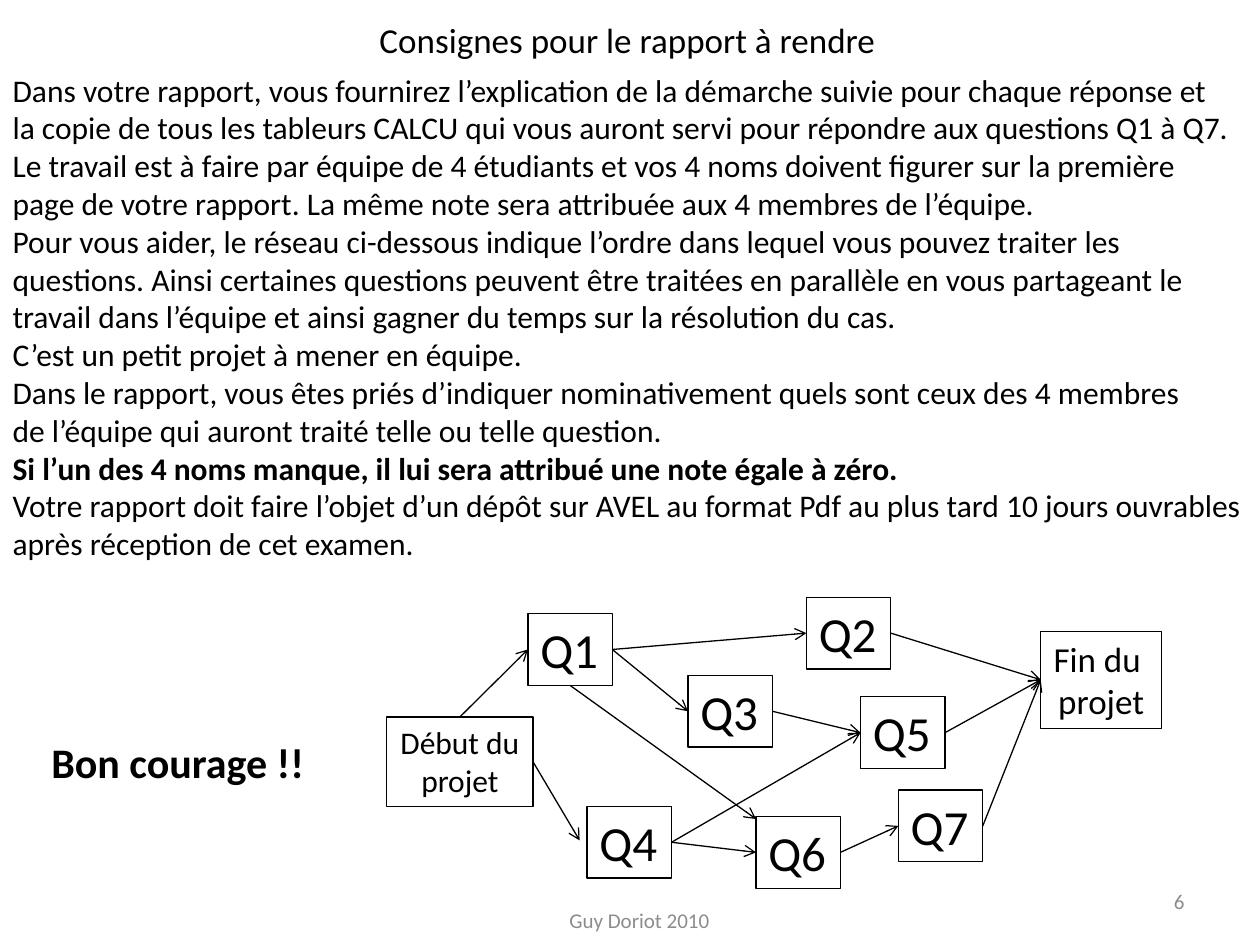
from lxml import etree
from pptx import Presentation
from pptx import util as u
from pptx.dml.color import RGBColor
from pptx.enum import shapes, text
from pptx.oxml import ns

# The slide is a grid of 100 columns by 75 rows
COLUMNS, ROWS = 100, 75
BLACK, GREY = "000000", "8C8C8C"
TOP, LEFT, BOTTOM, RIGHT = range(4)
ALIGN = text.PP_ALIGN

INSTRUCTIONS = [
    "Dans votre rapport, vous fournirez l’explication de la démarche suivie pour chaque réponse et",
    "la copie de tous les tableurs CALCU qui vous auront servi pour répondre aux questions Q1 à Q7.",
    "Le travail est à faire par équipe de 4 étudiants et vos 4 noms doivent figurer sur la première",
    "page de votre rapport. La même note sera attribuée aux 4 membres de l’équipe.",
    "Pour vous aider, le réseau ci-dessous indique l’ordre dans lequel vous pouvez traiter les",
    "questions. Ainsi certaines questions peuvent être traitées en parallèle en vous partageant le",
    "travail dans l’équipe et ainsi gagner du temps sur la résolution du cas.",
    "C’est un petit projet à mener en équipe.",
    "Dans le rapport, vous êtes priés d’indiquer nominativement quels sont ceux des 4 membres",
    "de l’équipe qui auront traité telle ou telle question.",
    "Si l’un des 4 noms manque, il lui sera attribué une note égale à zéro.",
    "Votre rapport doit faire l’objet d’un dépôt sur AVEL au format Pdf au plus tard 10 jours ouvrables",
    "après réception de cet examen.",
]
WARNING = 10  # the line set in bold

# Question boxes: column and row inside the network
QUESTIONS = {
    "Q1": (11.2, 1.3), "Q2": (33.3, 0), "Q3": (23.9, 6.2), "Q4": (15.9, 16.6),
    "Q5": (37.6, 7.9), "Q6": (29.3, 17.4), "Q7": (40.6, 15.3),
}
# Arrows from the right side of one box to the left side of the next
STEPS = [("Q1", "Q2"), ("Q1", "Q3"), ("Q3", "Q5"), ("Q4", "Q5"), ("Q4", "Q6"),
         ("Q6", "Q7"), ("Q7", "Fin"), ("Q5", "Fin"), ("Q2", "Fin")]

presentation = Presentation()
presentation.slide_width, presentation.slide_height = u.Inches(10), u.Inches(7.5)


def colour(value):
    return RGBColor.from_string(value)


def across(columns):
    return round(presentation.slide_width * columns / COLUMNS)


def down(rows):
    return round(presentation.slide_height * rows / ROWS)


def place(shape, box):
    left, top, width, height = box
    values = {"left": across(left), "top": down(top),
              "width": across(width), "height": down(height)}
    for name, value in values.items():
        setattr(shape, name, value)


def write(shape, lines, size, hex_colour=BLACK, align=ALIGN.LEFT, bold=False,
          anchor=text.MSO_ANCHOR.TOP, wrap=False):
    frame = shape.text_frame
    frame.text = "\n".join(lines)
    frame_format = {"word_wrap": wrap, "vertical_anchor": anchor,
                    "auto_size": text.MSO_AUTO_SIZE.NONE}
    for name, value in frame_format.items():
        setattr(frame, name, value)
    font_format = {"name": "Calibri", "size": u.Pt(size), "bold": bold}
    for paragraph in frame.paragraphs:
        paragraph.alignment = align
        paragraph.space_before = u.Pt(0)
        for run in paragraph.runs:
            for name, value in font_format.items():
                setattr(run.font, name, value)
            run.font.color.rgb = colour(hex_colour)


def add_label(slide, box, label, size, **text_format):
    shape = slide.shapes.add_textbox(0, 0, 0, 0)
    place(shape, box)
    write(shape, [label], size, **text_format)


def add_title(slide, box):
    place(slide.shapes.title, box)
    write(slide.shapes.title, ["Consignes pour le rapport à rendre"], 20,
          align=ALIGN.CENTER, anchor=text.MSO_ANCHOR.MIDDLE, wrap=True)


def add_instructions(slide, box):
    body = slide.placeholders[1]
    place(body, box)
    write(body, INSTRUCTIONS, 18)
    for paragraph in body.text_frame.paragraphs:
        properties = paragraph._p.get_or_add_pPr()
        properties.set("marL", "0")
        properties.set("indent", "0")
        etree.SubElement(properties, ns.qn("a:buNone"))
    body.text_frame.paragraphs[WARNING].runs[0].font.bold = True


def add_node(slide, box, lines, size, align=ALIGN.LEFT):
    node = slide.shapes.add_shape(shapes.MSO_SHAPE.RECTANGLE, 0, 0, 0, 0)
    place(node, box)
    node.shadow.inherit = False
    node.fill.background()
    node.line.color.rgb = colour(BLACK)
    node.line.width = u.Pt(0.75)
    write(node, lines, size, align=align)
    return node


def add_arrow(slide, start, start_side, end=None, end_side=LEFT, point=(0, 0)):
    """Join two boxes, or lead from one box to a free grid point."""
    arrow = slide.shapes.add_connector(shapes.MSO_CONNECTOR.STRAIGHT, 0, 0,
                                       across(point[0]), down(point[1]))
    arrow.begin_connect(start, start_side)
    if end is not None:
        arrow.end_connect(end, end_side)
    arrow.line.color.rgb = colour(BLACK)
    arrow.line.width = u.Pt(0.75)
    etree.SubElement(arrow.line._get_or_add_ln(), ns.qn("a:tailEnd"), type="arrow")
    etree.SubElement(arrow._element.spPr, ns.qn("a:effectLst"))


def add_network(slide, box):
    left, top, width, height = box
    nodes = {name: add_node(slide, (left + column, top + row, 6.7, 5.7), [name], 28)
             for name, (column, row) in QUESTIONS.items()}
    nodes["Début"] = add_node(slide, (left, top + 9.5, 11.6, 7.1),
                              ["Début du", "projet"], 18, ALIGN.CENTER)
    nodes["Fin"] = add_node(slide, (left + width - 9.6, top + 2.7, 9.6, 7.7),
                            ["Fin du ", "projet"], 20, ALIGN.CENTER)
    for start, end in STEPS:
        add_arrow(slide, nodes[start], RIGHT, nodes[end])
    add_arrow(slide, nodes["Début"], TOP, nodes["Q1"])
    # These two stop at free points: beside Q4 and at the corner of Q6
    add_arrow(slide, nodes["Début"], RIGHT, point=(left + 15.3, top + 19.3))
    add_arrow(slide, nodes["Q1"], BOTTOM, point=(left + 29.3, top + 17.6))


def add_footer(slide, box):
    left, top, width, height = box
    footer_format = {"hex_colour": GREY, "anchor": text.MSO_ANCHOR.MIDDLE, "wrap": True}
    add_label(slide, (left, top + 1.5, 31.7, 4), "Guy Doriot 2010", 12,
              align=ALIGN.CENTER, **footer_format)
    add_label(slide, (left + width - 23.3, top, 23.3, 4), "6", 12,
              align=ALIGN.RIGHT, **footer_format)


def main():
    slide = presentation.slides.add_slide(presentation.slide_layouts[1])
    add_title(slide, (4.8, 0, 90, 6.3))
    add_instructions(slide, (0, 5.1, 101.3, 40.4))
    add_label(slide, (3.1, 58, 22.3, 5), "Bon courage !!", 24, bold=True)
    add_network(slide, (30.7, 47.4, 61.5, 23.1))
    add_footer(slide, (34.9, 69.5, 60.1, 5.5))
    presentation.save("out.pptx")


if __name__ == "__main__":
    main()
